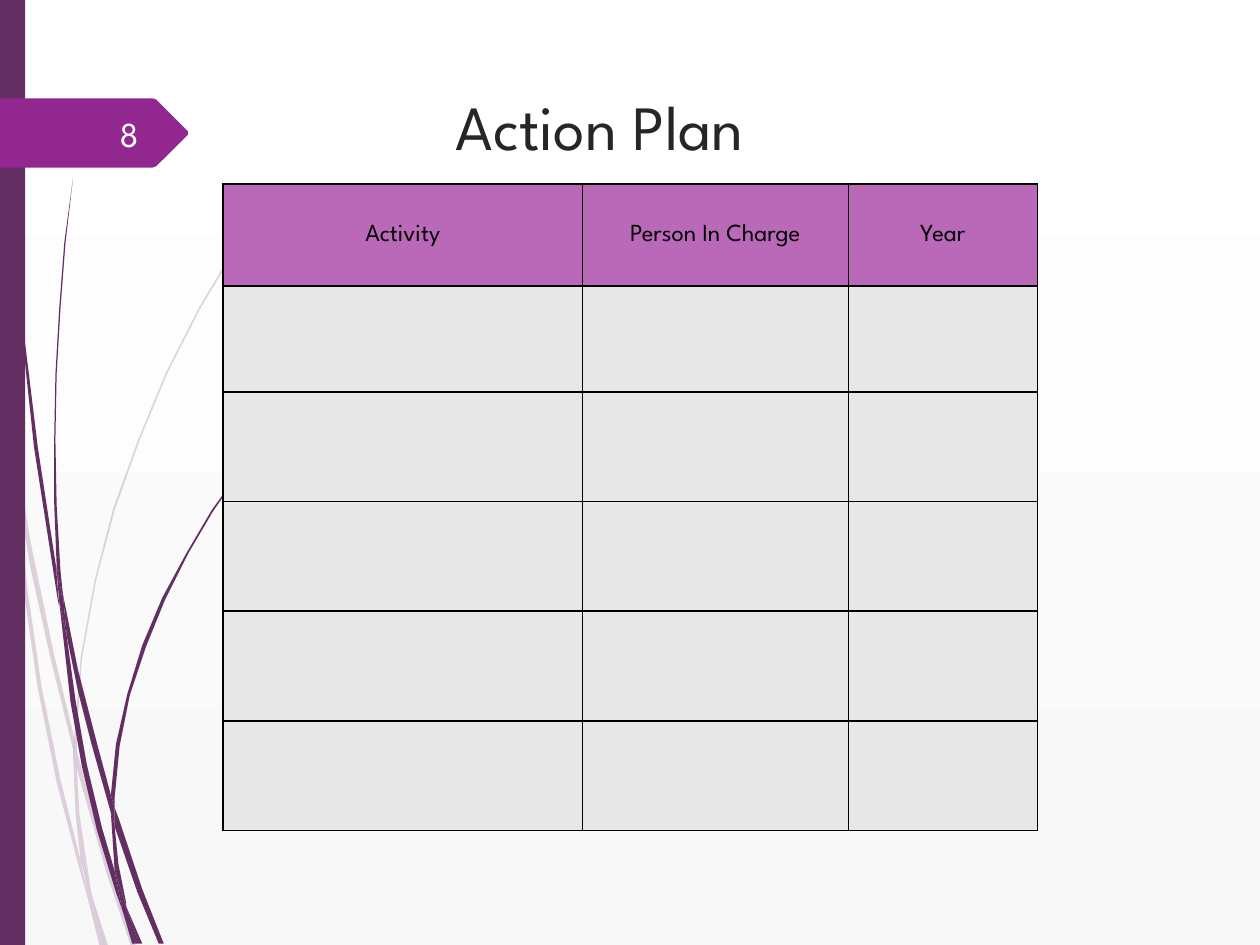
from lxml import etree
from pptx import Presentation
from pptx import util as u
from pptx.dml.color import RGBColor
from pptx.enum import shapes, text
from pptx.oxml.ns import qn

Cm, Pt = u.Cm, u.Pt
PLUM = RGBColor(0x63, 0x2E, 0x62)
PURPLE = RGBColor(0x92, 0x27, 0x8F)
ORCHID = RGBColor(0xBA, 0x69, 0xB8)
GREY = RGBColor(0xE7, 0xE7, 0xE7)
INK = RGBColor(0x26, 0x26, 0x26)
BLACK = RGBColor(0, 0, 0)
WHITE = RGBColor(0xFF, 0xFF, 0xFF)
OFF_WHITE = RGBColor(0xFE, 0xFF, 0xFF)
MIST = RGBColor(0xF8, 0xF8, 0xF8)

UNIT = Cm(0.0254)  # outline points are in hundredths of an inch

PALE_STEMS = [
    [(8, 350), (6, 322), (0, 282), (0, 299), (7, 344)],
    [(40, 522), (59, 599), (59, 586), (43, 520), (25, 434), (10, 345), (12, 376), (24, 450)],
    [(64, 607), (61, 596), (61, 610), (85, 694), (104, 751), (108, 751), (88, 692)],
    [(83, 751), (86, 751), (73, 711)],
    [(64, 683), (48, 619), (33, 545), (22, 469), (12, 376), (8, 350), (12, 410), (19, 470),
     (30, 546), (45, 621), (64, 693), (70, 714), (69, 707)],
    [(58, 599), (60, 646), (64, 683), (67, 692), (73, 711), (72, 706), (63, 646), (61, 610),
     (61, 608)],
    [(61, 584), (65, 523), (76, 462), (91, 405), (111, 349), (133, 296), (159, 245), (187, 198),
     (201, 175), (217, 154), (217, 153), (201, 175), (186, 197), (158, 244), (132, 295),
     (110, 348), (90, 403), (75, 461), (64, 522), (59, 584), (59, 586), (61, 596)],
    [(70, 714), (79, 751), (82, 751)],
    [(61, 608), (61, 610), (61, 596), (59, 586), (58, 599)],
    [(67, 692), (65, 683), (69, 707), (70, 714), (82, 751), (83, 751), (73, 711)],
]
DARK_STEMS = [
    [(5, 110), (14, 233), (27, 355), (46, 477), (47, 481), (45, 457), (45, 453), (30, 355),
     (15, 232), (6, 109), (4, 48), (3, 0), (2, 0), (3, 48)],
    [(73, 592), (88, 645), (88, 633), (88, 631), (77, 590), (62, 532), (50, 472), (53, 505),
     (62, 549)],
    [(94, 649), (91, 641), (91, 656), (109, 708), (126, 749), (130, 749), (113, 706)],
    [(91, 691), (81, 657), (69, 607), (60, 556), (53, 505), (47, 477), (56, 557), (65, 608),
     (77, 659), (92, 708), (97, 722), (96, 717)],
    [(50, 472), (48, 453), (45, 401), (44, 349), (45, 297), (48, 245), (52, 193), (58, 141),
     (51, 193), (47, 245), (44, 297), (43, 349), (43, 399), (45, 449), (49, 472)],
    [(110, 749), (113, 749), (100, 719)],
    [(47, 477), (53, 505), (50, 472), (49, 472), (45, 449), (45, 453)],
    [(91, 633), (95, 592), (103, 552), (116, 513), (131, 476), (149, 440), (169, 406),
     (191, 374), (203, 359), (216, 344), (215, 344), (203, 358), (191, 373), (168, 405),
     (148, 439), (129, 474), (113, 512), (101, 551), (92, 591), (88, 631), (91, 641)],
    [(97, 722), (105, 749), (108, 749)],
    [(88, 645), (91, 691), (96, 706), (100, 719), (100, 716), (94, 686), (91, 656), (90, 651)],
    [(88, 645), (90, 651), (91, 656), (91, 641), (88, 631), (88, 633)],
    [(96, 706), (91, 691), (96, 717), (97, 722), (108, 749), (110, 749), (100, 719)],
]
NUMBER_TAG = [(149, 107), (124, 132), (121, 133), (0, 133), (0, 78), (121, 78), (124, 79),
              (149, 104)]


class SlideMaker:
    font = "League Spartan"

    def __init__(self, s):
        self.s = s

    def background(self, top, bottom):
        fill = self.s.background.fill
        fill.gradient()
        fill.gradient_angle = 270
        for stop, color in zip(fill.gradient_stops, (top, bottom)):
            stop.color.rgb = color

    def paint(self, sp, color, opacity=100):
        sp.shadow.inherit = False
        sp.fill.solid()
        sp.fill.fore_color.rgb = color
        sp.line.fill.background()
        if opacity < 100:
            clr = sp.element.spPr.find(qn("a:solidFill"))[0]
            etree.SubElement(clr, qn("a:alpha"), val=str(opacity * 1000))

    def outline(self, points, color, opacity=100):
        builder = self.s.shapes.build_freeform(*points[0], scale=UNIT)
        builder.add_line_segments(points[1:], close=True)
        self.paint(builder.convert_to_shape(), color, opacity)

    def bar(self, x, y, w, h, color):
        rect = shapes.MSO_SHAPE.RECTANGLE
        self.paint(self.s.shapes.add_shape(rect, Cm(x), Cm(y), Cm(w), Cm(h)), color)

    def set_text(self, tf, words, size, color, align):
        tf.text = words
        p = tf.paragraphs[0]
        p.alignment = align
        r = p.runs[0]
        r.font.name, r.font.size = self.font, Pt(size)
        r.font.color.rgb = color

    def label(self, x, y, w, h, words, size, color, align=text.PP_ALIGN.LEFT,
              anchor=text.MSO_ANCHOR.TOP):
        tf = self.s.shapes.add_textbox(Cm(x), Cm(y), Cm(w), Cm(h)).text_frame
        tf.word_wrap = True
        tf.vertical_anchor = anchor
        self.set_text(tf, words, size, color, align)

    def borders(self, cell, color, width):
        tc_pr = cell._tc.get_or_add_tcPr()
        for side in ("lnL", "lnR", "lnT", "lnB"):
            ln = etree.SubElement(tc_pr, qn(f"a:{side}"), w=str(Pt(width)))
            fill = etree.SubElement(ln, qn("a:solidFill"))
            etree.SubElement(fill, qn("a:srgbClr"), val=str(color))

    def table(self, x, y, widths, heights, headings):
        table = self.s.shapes.add_table(len(heights), len(widths), Cm(x), Cm(y),
                                        Cm(sum(widths)), Cm(sum(heights))).table
        table.first_row = table.horz_banding = False
        for column, width in zip(table.columns, widths):
            column.width = Cm(width)
        for row, height in zip(table.rows, heights):
            row.height = Cm(height)
        for cell in table.iter_cells():
            self.borders(cell, BLACK, 1)
            cell.fill.solid()
            cell.fill.fore_color.rgb = GREY
        for cell, heading in zip(table.rows[0].cells, headings):
            cell.fill.fore_color.rgb = ORCHID
            cell.vertical_anchor = text.MSO_ANCHOR.MIDDLE
            cell.margin_left = cell.margin_right = cell.margin_top = cell.margin_bottom = 0
            self.set_text(cell.text_frame, heading, 14, BLACK, text.PP_ALIGN.CENTER)


def main():
    prs = Presentation()
    prs.slide_width, prs.slide_height = Cm(25.4), Cm(19.05)
    maker = SlideMaker(prs.slides.add_slide(prs.slide_layouts[6]))

    # Background and stems
    maker.background(WHITE, MIST)
    for points in PALE_STEMS:
        maker.outline(points, PLUM, opacity=20)
    for points in DARK_STEMS:
        maker.outline(points, PLUM)

    # Side bar and slide number
    maker.bar(0, 0, 0.51, 19.05, PLUM)
    maker.outline(NUMBER_TAG, PURPLE)
    maker.label(1.42, 2.18, 1.63, 1.02, "8", 20, OFF_WHITE,
                text.PP_ALIGN.RIGHT, text.MSO_ANCHOR.MIDDLE)

    # Title and plan table
    maker.label(8.94, 1.63, 9.3, 1.78, "Action Plan", 36, INK)
    maker.table(4.5, 3.71, [7.24, 5.36, 3.81], [2.06, 2.13] + [2.21] * 4,
                ["Activity", "Person In Charge", "Year"])

    prs.save("out.pptx")


if __name__ == "__main__":
    main()
